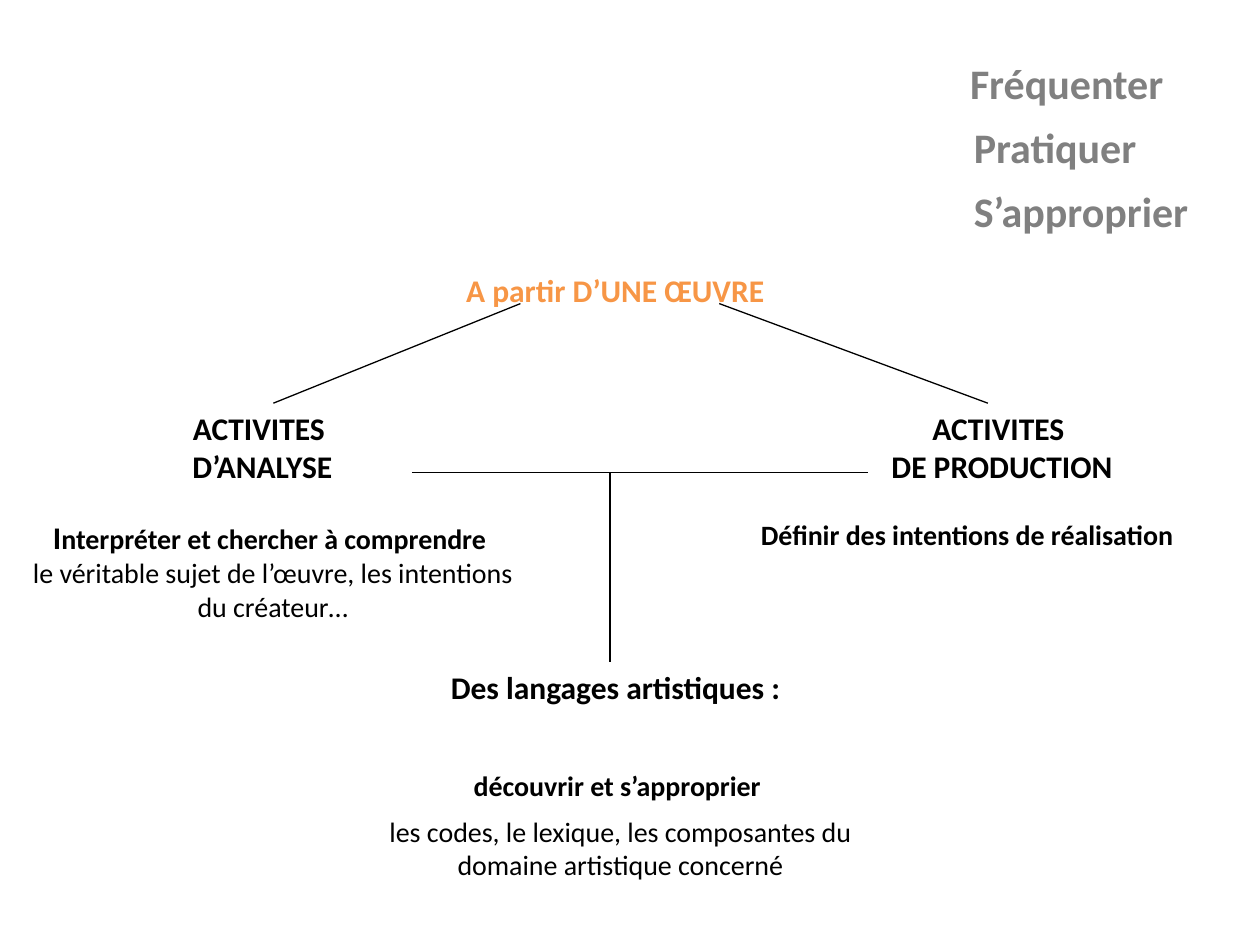
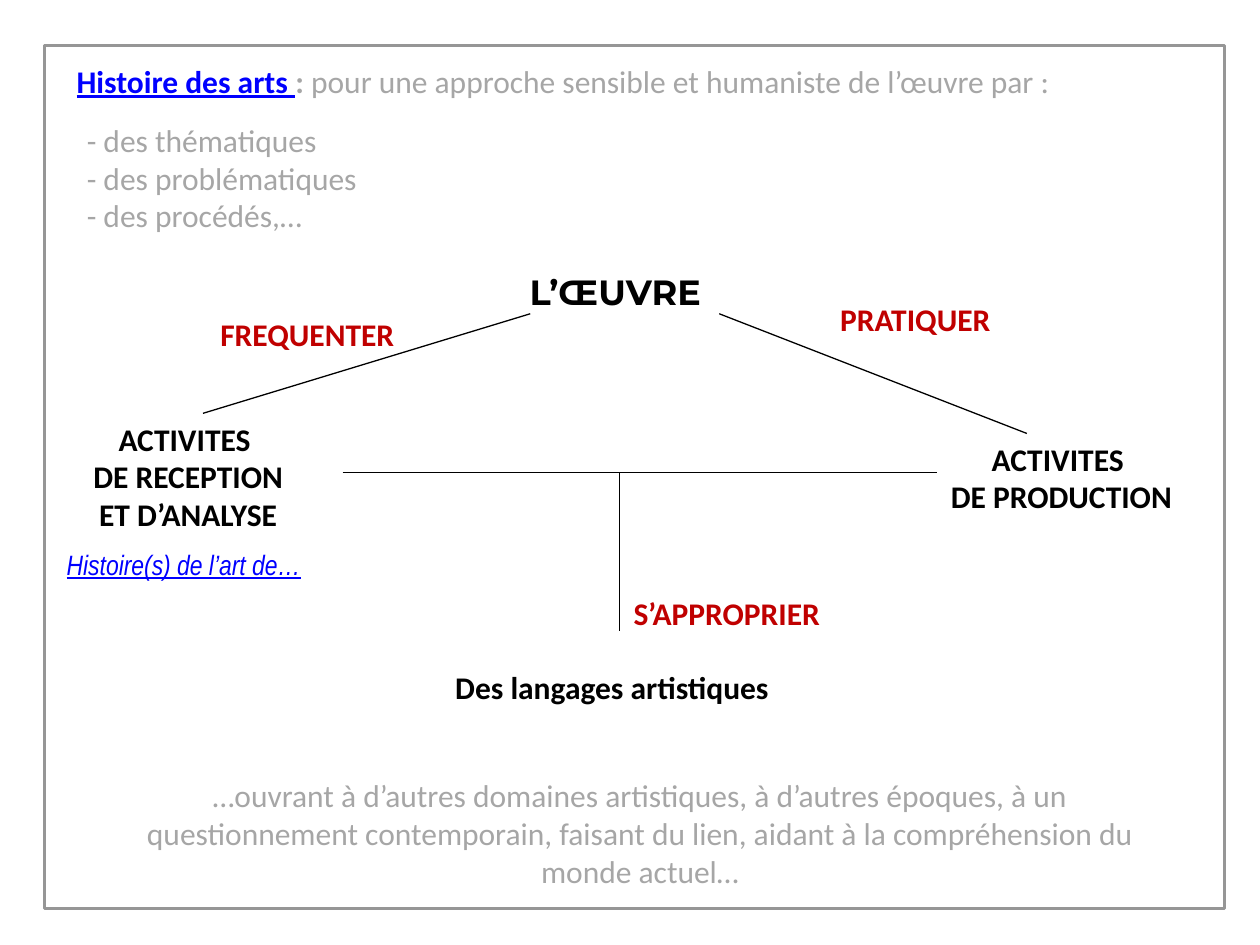
from dataclasses import dataclass
from pptx import Presentation
from pptx.dml.color import RGBColor
from pptx.enum.shapes import MSO_CONNECTOR, MSO_SHAPE
from pptx.enum.text import PP_ALIGN
from pptx.oxml.ns import qn
from pptx.util import Pt
from lxml.etree import SubElement


@dataclass(frozen=True)
class Theme:
    black: str = "000000"
    orange: str = "F79646"
    gray: str = "808080"
    pale: str = "A6A6A6"
    frame: str = "969696"
    blue: str = "0000FF"
    red: str = "C00000"
    body: str = "Calibri"
    narrow: str = "Arial Narrow"
    wide: str = "Montserrat"
    small: int = 16
    base: int = 18
    large: int = 20
    huge: int = 24
    thin: float = 0.75
    thick: float = 1.75
    gap: int = 7


look = Theme()
left, mid = PP_ALIGN.LEFT, PP_ALIGN.CENTER


def put(slide, box, paras, align=mid):
    frame = slide.shapes.add_textbox(*map(Pt, box)).text_frame
    frame.word_wrap = True
    for n, runs in enumerate(paras):
        para = frame.add_paragraph() if n else frame.paragraphs[0]
        para.alignment = align
        para.space_before = Pt(look.gap if n else 0)
        for text, size, color, style, face in runs:
            for k, line in enumerate(text.split("\n")):
                if k:
                    para.add_line_break()
                if not line:
                    continue
                run = para.add_run()
                run.text = line
                font = run.font
                font.name, font.size = face, Pt(size)
                font.color.rgb = RGBColor.from_string(color)
                font.bold = "b" in style
                font.italic = "i" in style
                font.underline = "u" in style


def link(slide, ends):
    wire = slide.shapes.add_connector(MSO_CONNECTOR.STRAIGHT, *map(Pt, ends))
    wire.line.color.rgb = RGBColor.from_string(look.black)
    wire.line.width = Pt(look.thin)
    SubElement(wire._element.spPr, qn("a:effectLst"))


deck = Presentation()
deck.slide_width, deck.slide_height = Pt(720), Pt(540)
blank = deck.slide_layouts[6]
one, two = deck.slides.add_slide(blank), deck.slides.add_slide(blank)

head = (look.base, look.black, "b", look.body)
bold = (look.small, look.black, "b", look.body)
plain = (look.small, look.black, "", look.body)
verb = (look.huge, look.gray, "b", look.body)
step = (look.base, look.red, "b", look.body)
note = (look.base, look.pale, "", look.body)

edge = two.shapes.add_shape(MSO_SHAPE.RECTANGLE, Pt(25.2), Pt(26), Pt(674.6), Pt(493))
edge.shadow.inherit = False
edge.fill.background()
edge.line.color.rgb = RGBColor.from_string(look.frame)
edge.line.width = Pt(look.thick)

bar = 270
plans = [
    (one, "A partir D’UNE ŒUVRE", (look.base, look.orange, "b", look.body),
     "Des langages artistiques :", "ACTIVITES \nD’ANALYSE", (0, 230.4), (422.6, 230.4),
     [(297.4, 173.5, 156.2, 230.4), (411, 173.5, 564.5, 230.4),
      (235.4, bar, 496, bar), (348.5, bar, 348.5, 378)]),
    (two, "L’ŒUVRE", (look.large, look.black, "b", look.wide),
     "Des langages artistiques ", "ACTIVITES \nDE RECEPTION\nET D’ANALYSE",
     (-42.5, 236.2), (456.5, 247.7),
     [(303, 179.3, 116, 236.2), (411, 179.3, 586.8, 247.7),
      (195.8, bar, 535.7, bar), (354.2, bar, 354.2, 360.7)]),
]
for slide, work, style, base, study, west, east, wires in plans:
    for ends in wires:
        link(slide, ends)
    put(slide, (201.6, 151.2, 300, 30), [[(work, *style)]])
    put(slide, (247, 378, 209.5, 50), [[(base, *head)]])
    put(slide, (*west, 300, 72), [[(study, *head)]])
    put(slide, (*east, 300, 72), [[("ACTIVITES \nDE PRODUCTION", *head)]])

for n, (word, x) in enumerate([("Fréquenter", 547.2), ("Pratiquer", 549.4), ("S’approprier", 549.4)]):
    put(one, (x, 29.5 + 36.4 * n, 143.3, 36), [[(word, *verb)]], left)

put(one, (2.9, 292.3, 306, 67.7), [[
    ("I", *head),
    ("nterpréter et chercher à comprendre \n", *bold),
    ("le véritable sujet de l’œuvre, les intentions du créateur…", *plain),
]])
put(one, (427.7, 292.3, 290, 26.6), [[("Définir des intentions de réalisation", *bold)]], left)
put(one, (195.8, 435.6, 317.5, 74.9), [
    [("découvrir et s’approprier ", *bold)],
    [("les codes, le lexique, les composantes du domaine artistique concerné", *plain)],
])

put(two, (36.7, 31.7, 652.3, 28.8), [[
    ("Histoire des arts ", look.base, look.blue, "bu", look.body),
    (": ", look.base, look.pale, "b", look.body),
    ("pour une approche sensible et humaniste de l’œuvre par :", *note),
]], left)
put(two, (42.5, 65.5, 272.2, 110.9),
    [[("- des thématiques\n- des problématiques\n- des procédés,…", *note)]], left)
for word, x, y in [("FREQUENTER", 118.8, 176.4), ("PRATIQUER", 473, 167.8), ("S’APPROPRIER", 355, 336.2)]:
    put(two, (x, y, 181.4, 28.8), [[(word, *step)]], left)
put(two, (31, 309.6, 164.2, 26.6),
    [[("Histoire(s) de l’art de…", look.small, look.blue, "iu", look.narrow)]], left)
put(two, (54, 440, 623.5, 72), [[(
    "…ouvrant à d’autres domaines artistiques, à d’autres époques, à un questionnement "
    "contemporain, faisant du lien, aidant à la compréhension du monde actuel…", *note)]])

deck.save("out.pptx")
